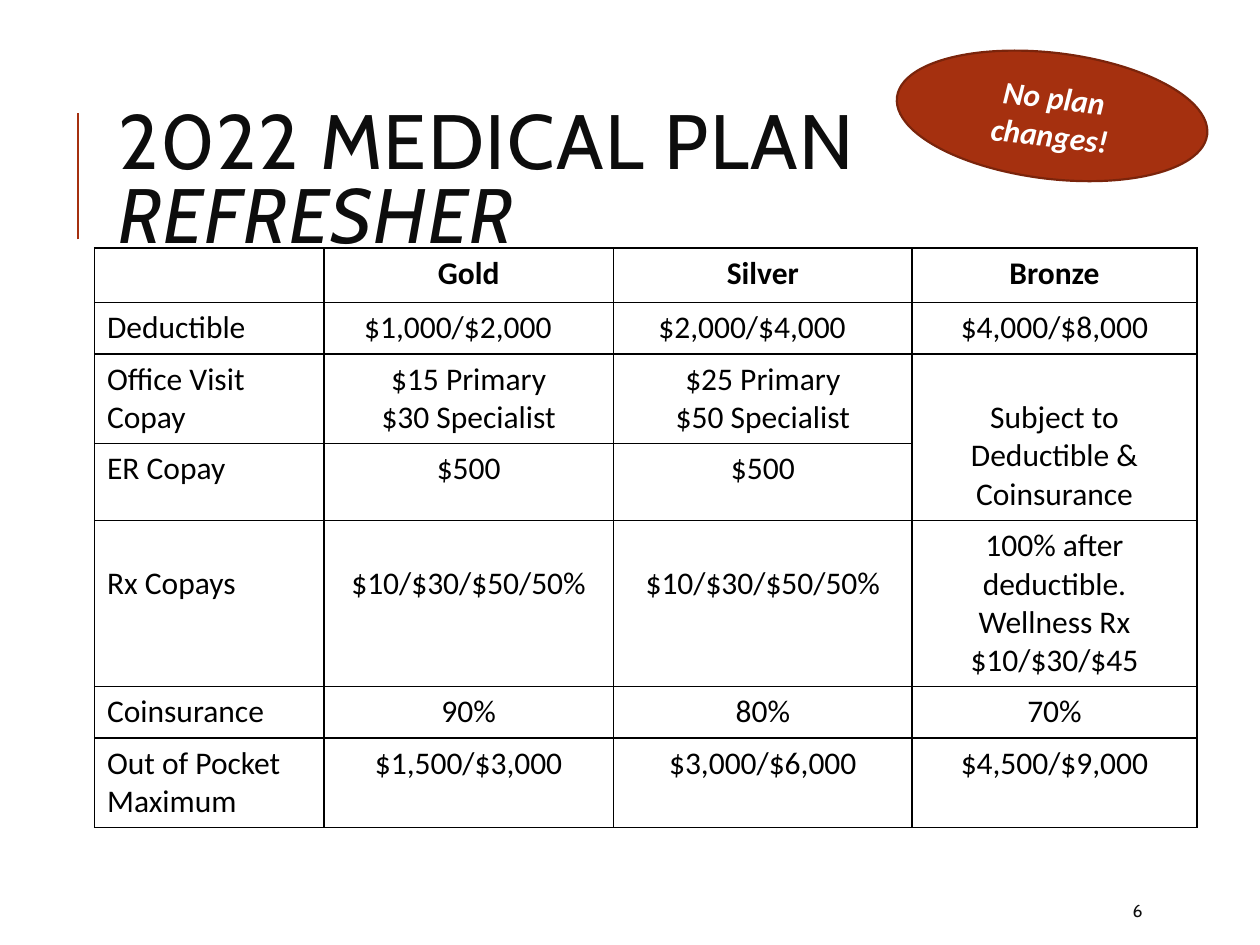
from lxml.etree import SubElement
from pptx import Presentation
from pptx.dml.color import RGBColor
from pptx.enum.shapes import MSO_CONNECTOR as Connector, MSO_SHAPE as Shape
from pptx.enum.text import MSO_ANCHOR as Anchor, PP_ALIGN as Align
from pptx.oxml.ns import qn
from pptx.util import Inches, Pt

COLORS = {"rust": "A5300F", "dark_rust": "7A240B", "ink": "0D0D0D",
          "black": "000000", "white": "FFFFFF"}
COLUMN_WIDTHS = [1.82, 2.3, 2.37, 2.26]
ROW_HEIGHTS = [0.43, 0.41, 0.71, 0.61, 1.32, 0.41, 0.71]
PLAN_ROWS = [
    ["", "Gold", "Silver", "Bronze"],
    ["Deductible", "$1,000/$2,000", "$2,000/$4,000", "$4,000/$8,000"],
    ["Office Visit Copay", "$15 Primary\n$30 Specialist",
     "$25 Primary\n$50 Specialist", "Subject to Deductible & Coinsurance"],
    ["ER Copay", "$500", "$500", ""],
    ["Rx Copays", "$10/$30/$50/50%", "$10/$30/$50/50%",
     "100% after deductible. Wellness Rx $10/$30/$45"],
    ["Coinsurance", "90%", "80%", "70%"],
    ["Out of Pocket Maximum", "$1,500/$3,000", "$3,000/$6,000", "$4,500/$9,000"],
]
LOWERED_CELLS = {(2, 3), (4, 0), (4, 1), (4, 2)}
SHIFTED_CELLS = {(1, 1), (1, 2)}


def color(name):
    """Return the named colour."""
    return RGBColor.from_string(COLORS[name])


def style(span, size, face, shade, bold=False, italic=False):
    """Format one run of text."""
    font = span.font
    font.size, font.name, font.bold, font.italic = Pt(size), face, bold, italic
    font.color.rgb = color(shade)


def add_text_box(page, left, top, width, height):
    """Add a wrapping, vertically centred text box and return its paragraph."""
    box = page.shapes.add_textbox(Inches(left), Inches(top), Inches(width), Inches(height))
    box.text_frame.word_wrap = True
    box.text_frame.vertical_anchor = Anchor.MIDDLE
    return box.text_frame.paragraphs[0]


def add_title(page, left, top, width, height):
    """Place the accent line and the two-part title."""
    x = Inches(left - 0.22)
    accent = page.shapes.add_connector(
        Connector.STRAIGHT, x, Inches(top + 1.26), x, Inches(top + 0.26))
    accent.line.color.rgb = color("rust")
    accent.line.width = Pt(1.5)
    SubElement(accent.element.spPr, qn("a:effectLst"))
    para = add_text_box(page, left, top, width, height)
    para.line_spacing = 0.8
    for words, italic in (("2022 MEDICAL PLAN ", False), ("REFRESHER", True)):
        span = para.add_run()
        span.text = words
        style(span, 44, "Cabin", "ink", italic=italic)
        span.font._element.set("spc", "100")


def add_page_number(page, left, top, width, height):
    """Place the page number."""
    para = add_text_box(page, left, top, width, height)
    para.text = "6"
    style(para.runs[0], 10, "Cabin", "ink")


def add_borders(cell):
    """Draw a thin black line on each side of a cell."""
    properties = cell._tc.get_or_add_tcPr()
    for position, side in enumerate(("a:lnL", "a:lnR", "a:lnT", "a:lnB")):
        line = SubElement(properties, qn(side), w=str(Pt(1)))
        fill = SubElement(line, qn("a:solidFill"))
        SubElement(fill, qn("a:srgbClr"), val=COLORS["black"])
        properties.remove(line)
        properties.insert(position, line)


def fill_cell(cell, words, row, column):
    """Write and format one cell of the plan table."""
    cell.fill.background()
    add_borders(cell)
    if (row, column) in LOWERED_CELLS:
        cell.margin_top = Inches(0.35)
    if (row, column) in SHIFTED_CELLS:
        cell.margin_right = Inches(0.27)
    cell.text_frame.text = words
    for para in cell.text_frame.paragraphs:
        para.alignment = Align.CENTER if column else Align.LEFT
        para.font.size = Pt(18)
        for span in para.runs:
            style(span, 18, "Calibri", "black", bold=row == 0)


def add_plan_table(page, left, top):
    """Place the table that compares the three plans."""
    frame = page.shapes.add_table(
        len(PLAN_ROWS), len(COLUMN_WIDTHS), Inches(left), Inches(top),
        Inches(sum(COLUMN_WIDTHS)), Inches(sum(ROW_HEIGHTS)))
    table = frame.table
    table.first_row = table.horz_banding = False
    for column, width in zip(table.columns, COLUMN_WIDTHS):
        column.width = Inches(width)
    for row, height in zip(table.rows, ROW_HEIGHTS):
        row.height = Inches(height)
    for row, entries in enumerate(PLAN_ROWS):
        for column, words in enumerate(entries):
            fill_cell(table.cell(row, column), words, row, column)
    table.cell(2, 3).merge(table.cell(3, 3))


def add_badge(page, left, top, width, height):
    """Place the tilted oval badge."""
    badge = page.shapes.add_shape(
        Shape.OVAL, Inches(left), Inches(top), Inches(width), Inches(height))
    badge.rotation = 6.9
    badge.shadow.inherit = False
    badge.fill.solid()
    badge.fill.fore_color.rgb = color("rust")
    badge.line.color.rgb = color("dark_rust")
    badge.line.width = Pt(1.25)
    badge.text_frame.word_wrap = True
    badge.text_frame.vertical_anchor = Anchor.MIDDLE
    para = badge.text_frame.paragraphs[0]
    para.text = "No plan changes!"
    para.alignment = Align.CENTER
    style(para.runs[0], 18, "Calibri", "white", bold=True, italic=True)


def main():
    """Build the medical plan slide."""
    deck = Presentation()
    deck.slide_width, deck.slide_height = Inches(10), Inches(7.5)
    page = deck.slides.add_slide(deck.slide_layouts[6])
    add_title(page, 0.84, 0.64, 7.97, 1.64)
    add_page_number(page, 8.89, 7.08, 0.8, 0.3)
    add_plan_table(page, 0.75, 1.97)
    add_badge(page, 7.11, 0.42, 2.48, 1)
    deck.save("out.pptx")


if __name__ == "__main__":
    main()
